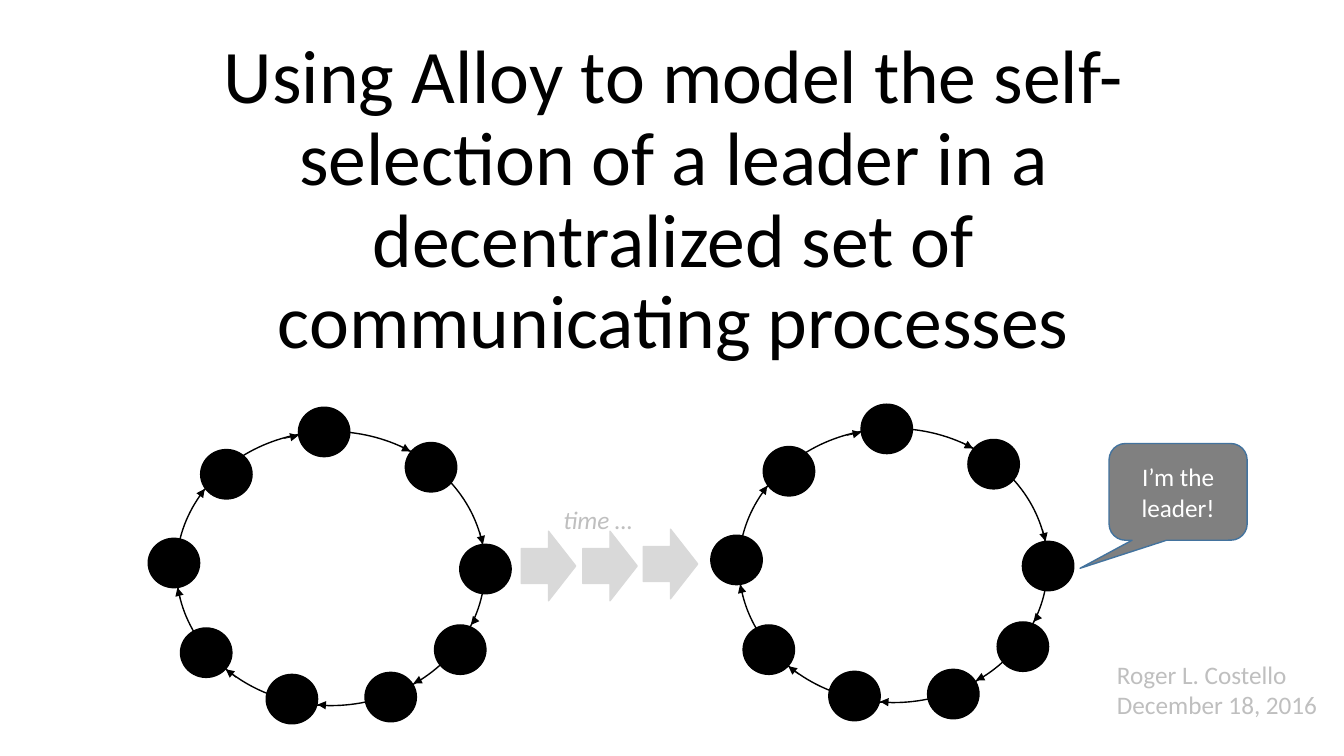
import pptx
import pptx.dml.color
import pptx.enum.dml
import pptx.enum.shapes
import pptx.enum.text
import pptx.oxml
import pptx.oxml.ns
import pptx.util
from dataclasses import dataclass

EMU_PER_PX = 9144  # 100 px to the inch
SHAPE = pptx.enum.shapes.MSO_SHAPE
ALIGN = pptx.enum.text.PP_ALIGN
ANCHOR = pptx.enum.text.MSO_ANCHOR


@dataclass(frozen=True)
class Theme:
    font: str = "Calibri"
    title_size: int = 54
    body_size: int = 18
    ink: str = "000000"
    white: str = "FFFFFF"
    muted: str = "BFBFBF"
    time_arrow: str = "D9D9D9"
    callout: str = "808080"
    callout_line: str = "43739E"
    outline: float = 1
    hairline: float = 0.5


THEME = Theme()

# One ring of processes, measured from the ring's top left corner
RING_SIZE = (306, 272)
NODE_SIZE = (51, 49)
NODES = [(281, 112), (256, 192), (187, 239), (89, 241), (4, 195),
         (-28, 106), (24, 18), (121, -24), (227, 11)]
MESSAGES = [(107, 7, 121, 4), (221, 14, 232, 20), (301, 100, 304, 112),
            (297, 186, 292, 192), (243, 246, 235, 250), (153, 272, 140, 271),
            (59, 244, 49, 236), (4, 167, 1, 155), (23, 64, 28, 57)]


def px(n):
    return pptx.util.Emu(n * EMU_PER_PX)


def rgb(value):
    return pptx.dml.color.RGBColor.from_string(value)


def add_preset(shapes, kind, x, y, w, h, line, fill=None):
    s = shapes.add_shape(kind, px(x), px(y), px(w), px(h))
    s.shadow.inherit = False
    if fill:
        s.fill.solid()
        s.fill.fore_color.rgb = rgb(fill)
    else:
        s.fill.background()
    s.line.color.rgb = rgb(line)
    s.line.width = pptx.util.Pt(THEME.outline)
    return s


def add_message(shapes, x1, y1, x2, y2):
    """Thin connector ending in a triangle arrowhead."""
    c = shapes.add_connector(pptx.enum.shapes.MSO_CONNECTOR.STRAIGHT,
                             px(x1), px(y1), px(x2), px(y2))
    c.line.color.rgb = rgb(THEME.ink)
    c.line.width = pptx.util.Pt(THEME.hairline)
    tail = pptx.oxml.parse_xml(
        f'<a:tailEnd {pptx.oxml.ns.nsdecls("a")} type="triangle"/>')
    c.line._get_or_add_ln().append(tail)
    effects = pptx.oxml.parse_xml(f'<a:effectLst {pptx.oxml.ns.nsdecls("a")}/>')
    c._element.spPr.append(effects)


def set_text(s, lines, size, color, align=ALIGN.LEFT, anchor=ANCHOR.TOP,
             wrap=True, italic=False, spacing=None):
    tf = s.text_frame
    tf.word_wrap = wrap
    tf.vertical_anchor = anchor
    for i, line in enumerate(lines):
        p = tf.paragraphs[0] if i == 0 else tf.add_paragraph()
        p.text = line
        p.alignment = align
        p.line_spacing = spacing
        p.font.name = THEME.font
        p.font.size = pptx.util.Pt(size)
        p.font.italic = italic
        p.font.color.rgb = rgb(color)


def add_label(shapes, x, y, w, h, lines, italic=False):
    """Muted text box that fits its text."""
    s = shapes.add_textbox(px(x), px(y), px(w), px(h))
    set_text(s, lines, THEME.body_size, THEME.muted, wrap=False, italic=italic)
    s.text_frame.auto_size = pptx.enum.text.MSO_AUTO_SIZE.SHAPE_TO_FIT_TEXT


def add_ring(shapes, x, y):
    ring = shapes.add_group_shape().shapes
    add_preset(ring, SHAPE.OVAL, x, y, *RING_SIZE, THEME.ink)
    for dx, dy in NODES:
        add_preset(ring, SHAPE.OVAL, x + dx, y + dy, *NODE_SIZE,
                   THEME.ink, THEME.ink)
    for x1, y1, x2, y2 in MESSAGES:
        add_message(ring, x + x1, y + y1, x + x2, y + y2)


def main():
    prs = pptx.Presentation()
    prs.slide_width, prs.slide_height = px(1333), px(750)
    shapes = prs.slides.add_slide(prs.slide_layouts[6]).shapes

    # Title
    title = shapes.add_textbox(px(168), px(106), px(1000), px(261))
    set_text(title, ["Using Alloy to model the self-selection of a leader in a "
                     "decentralized set of communicating processes"],
             THEME.title_size, THEME.ink, ALIGN.CENTER, ANCHOR.BOTTOM,
             spacing=0.9)

    # Leader's callout
    callout = add_preset(shapes, SHAPE.ROUNDED_RECTANGULAR_CALLOUT,
                         1100, 440, 137, 96, THEME.callout_line, THEME.callout)
    for i, value in enumerate((-0.71, 0.79, 0.17)):
        callout.adjustments[i] = value
    set_text(callout, ["I’m the leader!"], THEME.body_size, THEME.white,
             ALIGN.CENTER, ANCHOR.MIDDLE)

    # Author and date
    add_label(shapes, 1098, 649, 221, 71,
              ["Roger L. Costello", "December 18, 2016"])

    # Rings before and after the selection
    for x, y in ((175, 428), (733, 425)):
        add_ring(shapes, x, y)

    # Passing of time
    for x, y in ((517, 527), (578, 527), (638, 525)):
        add_preset(shapes, SHAPE.RIGHT_ARROW, x, y, 54, 69,
                   THEME.time_arrow, THEME.time_arrow)
    add_label(shapes, 549, 495, 90, 40, ["time …"], italic=True)

    prs.save("out.pptx")


if __name__ == "__main__":
    main()
